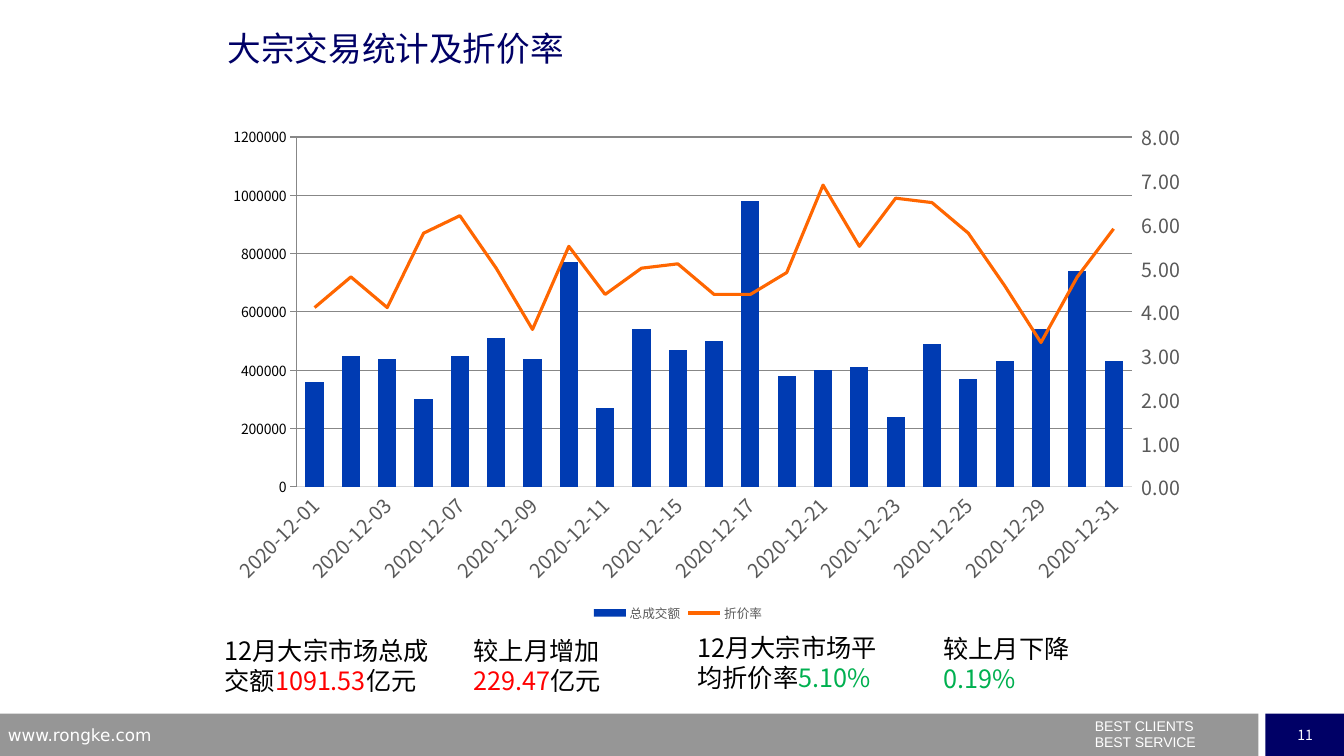
import pptx
import pptx.chart.axis
import pptx.chart.data
import pptx.dml.color
import pptx.enum.chart
import pptx.enum.shapes
import pptx.enum.text
import pptx.oxml
import pptx.oxml.ns
import pptx.util

Inches = pptx.util.Inches
Pt = pptx.util.Pt
RGBColor = pptx.dml.color.RGBColor
qn = pptx.oxml.ns.qn

NAVY = RGBColor(0x00, 0x00, 0x66)
BLUE = RGBColor(0x00, 0x3B, 0xB2)
ORANGE = RGBColor(0xFF, 0x66, 0x00)
RED = RGBColor(0xFF, 0x00, 0x00)
GREEN = RGBColor(0x00, 0xB0, 0x50)
GREY = RGBColor(0x96, 0x96, 0x96)
GRID_GREY = RGBColor(0xD9, 0xD9, 0xD9)
LABEL_GREY = RGBColor(0x59, 0x59, 0x59)
BLACK = RGBColor(0x00, 0x00, 0x00)
WHITE = RGBColor(0xFF, 0xFF, 0xFF)

CJK_FONT = "Noto Sans CJK SC"

TRADING_DAYS = [1, 2, 3, 4, 7, 8, 9, 10, 11, 14, 15, 16, 17, 18,
                21, 22, 23, 24, 25, 28, 29, 30, 31]
TURNOVER = [360000, 450000, 440000, 300000, 450000, 510000, 440000, 770000,
            270000, 540000, 470000, 500000, 980000, 380000, 400000, 410000,
            240000, 490000, 370000, 430000, 540000, 740000, 430000]
DISCOUNT = [4.1, 4.8, 4.1, 5.8, 6.2, 5, 3.6, 5.5, 4.4, 5, 5.1, 4.4,
            4.4, 4.9, 6.9, 5.5, 6.6, 6.5, 5.8, 4.6, 3.3, 4.8, 5.9]

NOTES = [
    (2.13, 6.25, 2.38, [[("12月大宗市场总成交额", BLACK), ("1091.53", RED), ("亿元", BLACK)]]),
    (4.6, 6.25, 1.92, [[("较上月增加", BLACK)], [("229.47", RED), ("亿元", BLACK)]]),
    (6.82, 6.22, 2.17, [[("12月大宗市场平均折价率", BLACK), ("5.10%", GREEN)]]),
    (9.26, 6.23, 1.65, [[("较上月下降", BLACK), ("0.19%", GREEN)]]),
]

CHART_XML = f'xmlns:c="{pptx.oxml.ns.nsuri("c")}"'
LINE_PLOT = (f'<c:lineChart {CHART_XML}><c:grouping val="standard"/><c:varyColors val="0"/>'
             '<c:marker val="1"/><c:axId val="501"/><c:axId val="502"/></c:lineChart>')
HIDDEN_AXIS = (f'<c:catAx {CHART_XML}><c:axId val="501"/><c:scaling><c:orientation val="minMax"/>'
               '</c:scaling><c:delete val="1"/><c:axPos val="b"/><c:crossAx val="502"/>'
               '<c:crosses val="autoZero"/></c:catAx>')
RIGHT_AXIS = (f'<c:valAx {CHART_XML}><c:axId val="502"/><c:scaling><c:orientation val="minMax"/>'
              '</c:scaling><c:delete val="0"/><c:axPos val="r"/><c:crossAx val="501"/>'
              '<c:crosses val="max"/></c:valAx>')
PLOT_LAYOUT = (f'<c:layout {CHART_XML}><c:manualLayout><c:layoutTarget val="inner"/>'
               '<c:xMode val="edge"/><c:yMode val="edge"/><c:x val="0.135"/><c:y val="0.047"/>'
               '<c:w val="0.799"/><c:h val="0.682"/></c:manualLayout></c:layout>')


def write_text(frame, paragraphs, size=18, font=CJK_FONT, align=None,
               line_spacing=None, space_before=None):
    for index, runs in enumerate(paragraphs):
        paragraph = frame.paragraphs[0] if index == 0 else frame.add_paragraph()
        paragraph.alignment = align
        paragraph.line_spacing = line_spacing
        if index:
            paragraph.space_before = space_before
        for text, color in runs:
            run = paragraph.add_run()
            run.text = text
            set_font(run.font, size, color, font)
        add_east_asian_font(paragraph._p)


def set_font(font, size, color, name=CJK_FONT):
    font.size = Pt(size)
    font.name = name
    font.color.rgb = color


def add_east_asian_font(element):
    for latin in list(element.iter(qn("a:latin"))):
        east_asian = latin.makeelement(qn("a:ea"), {"typeface": latin.get("typeface")})
        latin.addnext(east_asian)


class SlideBuilder:
    def __init__(self, presentation):
        self.slide = presentation.slides.add_slide(presentation.slide_layouts[6])

    def rectangle(self, left, top, width, height, color):
        shape = self.slide.shapes.add_shape(
            pptx.enum.shapes.MSO_SHAPE.RECTANGLE,
            Inches(left), Inches(top), Inches(width), Inches(height))
        shape.shadow.inherit = False
        shape.fill.solid()
        shape.fill.fore_color.rgb = color
        shape.line.fill.background()
        return shape

    def text_box(self, left, top, width, height, paragraphs, grow=False, **style):
        box = self.slide.shapes.add_textbox(
            Inches(left), Inches(top), Inches(width), Inches(height))
        box.text_frame.word_wrap = True
        if grow:
            box.text_frame.auto_size = pptx.enum.text.MSO_AUTO_SIZE.SHAPE_TO_FIT_TEXT
        write_text(box.text_frame, paragraphs, **style)

    def axis(self, axis, number_format=None, line=None, tick="NONE"):
        axis.major_tick_mark = pptx.enum.chart.XL_TICK_MARK[tick]
        axis.minor_tick_mark = pptx.enum.chart.XL_TICK_MARK.NONE
        set_font(axis.tick_labels.font, 14, LABEL_GREY)
        if number_format:
            axis.tick_labels.number_format = number_format
            axis.tick_labels.number_format_is_linked = False
        if line:
            axis.format.line.color.rgb = line
            axis.format.line.width = Pt(0.75)
        else:
            axis.format.line.fill.background()

    def combined_chart(self, left, top, width, height):
        data = pptx.chart.data.CategoryChartData()
        data.categories = [f"2020-12-{day:02d}" for day in TRADING_DAYS]
        data.add_series("总成交额", TURNOVER)
        data.add_series("折价率", DISCOUNT)
        chart = self.slide.shapes.add_chart(
            pptx.enum.chart.XL_CHART_TYPE.COLUMN_CLUSTERED,
            Inches(left), Inches(top), Inches(width), Inches(height), data).chart
        chart.has_title = False
        set_font(chart.font, 10, BLACK)

        columns = chart.plots[0]
        columns.gap_width = 100
        columns.overlap = -27
        columns.vary_by_categories = False
        turnover, discount = columns.series
        turnover.format.fill.solid()
        turnover.format.fill.fore_color.rgb = BLUE

        plot_area = chart._chartSpace.chart.plotArea
        for layout in plot_area.findall(qn("c:layout")):
            plot_area.remove(layout)
        plot_area.insert(0, pptx.oxml.parse_xml(PLOT_LAYOUT))
        line_plot = pptx.oxml.parse_xml(LINE_PLOT)
        plot_area.find(qn("c:barChart")).addnext(line_plot)
        series_element = discount._element
        for invert in series_element.findall(qn("c:invertIfNegative")):
            series_element.remove(invert)
        line_plot.insert(2, series_element)
        hidden_axis = pptx.oxml.parse_xml(HIDDEN_AXIS)
        right_axis = pptx.oxml.parse_xml(RIGHT_AXIS)
        plot_area.find(qn("c:valAx")).addnext(hidden_axis)
        hidden_axis.addnext(right_axis)

        discount = chart.plots[1].series[0]
        discount.format.line.color.rgb = ORANGE
        discount.format.line.width = Pt(2.25)
        discount.marker.style = pptx.enum.chart.XL_MARKER_STYLE.NONE
        discount.smooth = False

        self.axis(chart.category_axis, line=GRID_GREY)
        label_body = chart.category_axis._element.find(qn("c:txPr")).find(qn("a:bodyPr"))
        label_body.set("rot", "-2700000")
        self.axis(chart.value_axis, "#,##0.00")
        gridline = chart.value_axis.major_gridlines.format.line
        gridline.color.rgb = GRID_GREY
        gridline.width = Pt(0.75)
        self.axis(pptx.chart.axis.ValueAxis(right_axis), "0.00", tick="OUTSIDE")

        chart.has_legend = True
        chart.legend.position = pptx.enum.chart.XL_LEGEND_POSITION.BOTTOM
        chart.legend.include_in_layout = False
        set_font(chart.legend.font, 9, LABEL_GREY)
        add_east_asian_font(chart._chartSpace)


def main():
    presentation = pptx.Presentation()
    presentation.slide_width = Inches(13.33)
    presentation.slide_height = Inches(7.5)
    builder = SlideBuilder(presentation)

    builder.rectangle(0, 7.08, 12.48, 0.42, GREY)
    page_number = builder.rectangle(12.55, 7.08, 0.79, 0.42, NAVY).text_frame
    page_number.word_wrap = False
    page_number.vertical_anchor = pptx.enum.text.MSO_ANCHOR.MIDDLE
    write_text(page_number, [[("11", WHITE)]], size=10, align=pptx.enum.text.PP_ALIGN.CENTER)
    builder.text_box(10.76, 7.14, 2.56, 0.36,
                     [[("BEST CLIENTS", WHITE)], [("BEST SERVICE", WHITE)]],
                     size=10, font="Arial", line_spacing=0.5, space_before=Pt(5.7))
    builder.text_box(-0.02, 7.14, 3.22, 0.26, [[("www.rongke.com", WHITE)]],
                     size=12, font="DejaVu Sans")
    builder.text_box(2.16, 0.23, 9, 1.25, [[("大宗交易统计及折价率", NAVY)]], size=24)
    for left, top, width, paragraphs in NOTES:
        builder.text_box(left, top, width, 0.71, paragraphs, grow=True)
    builder.combined_chart(1.54, 1.12, 10.37, 5.09)

    presentation.save("out.pptx")


if __name__ == "__main__":
    main()
